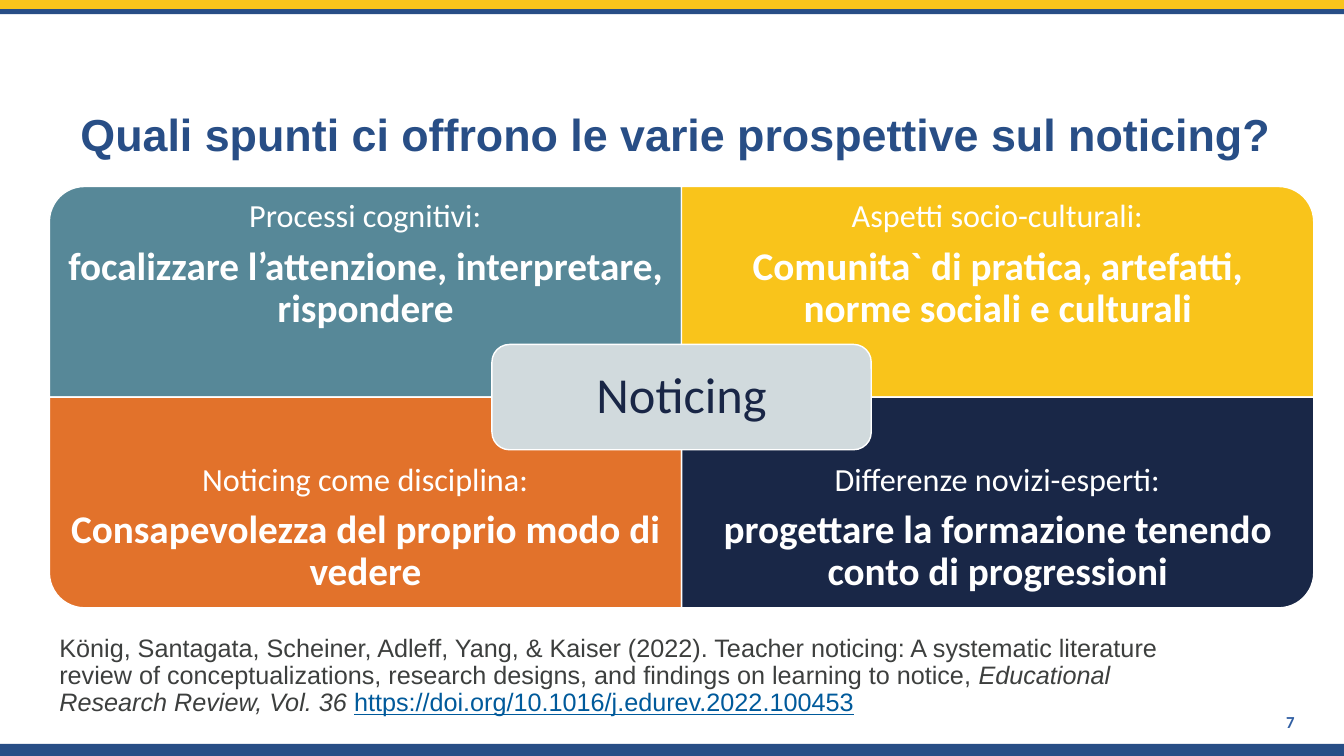
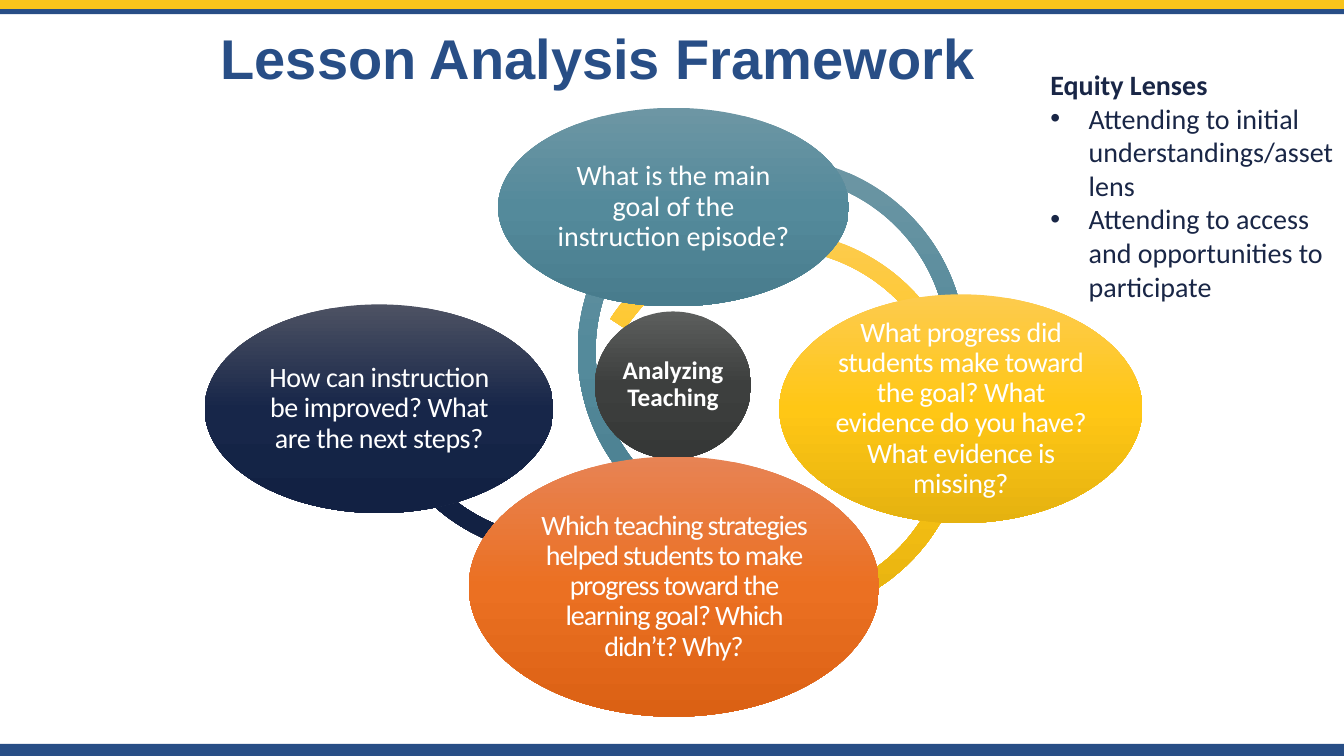
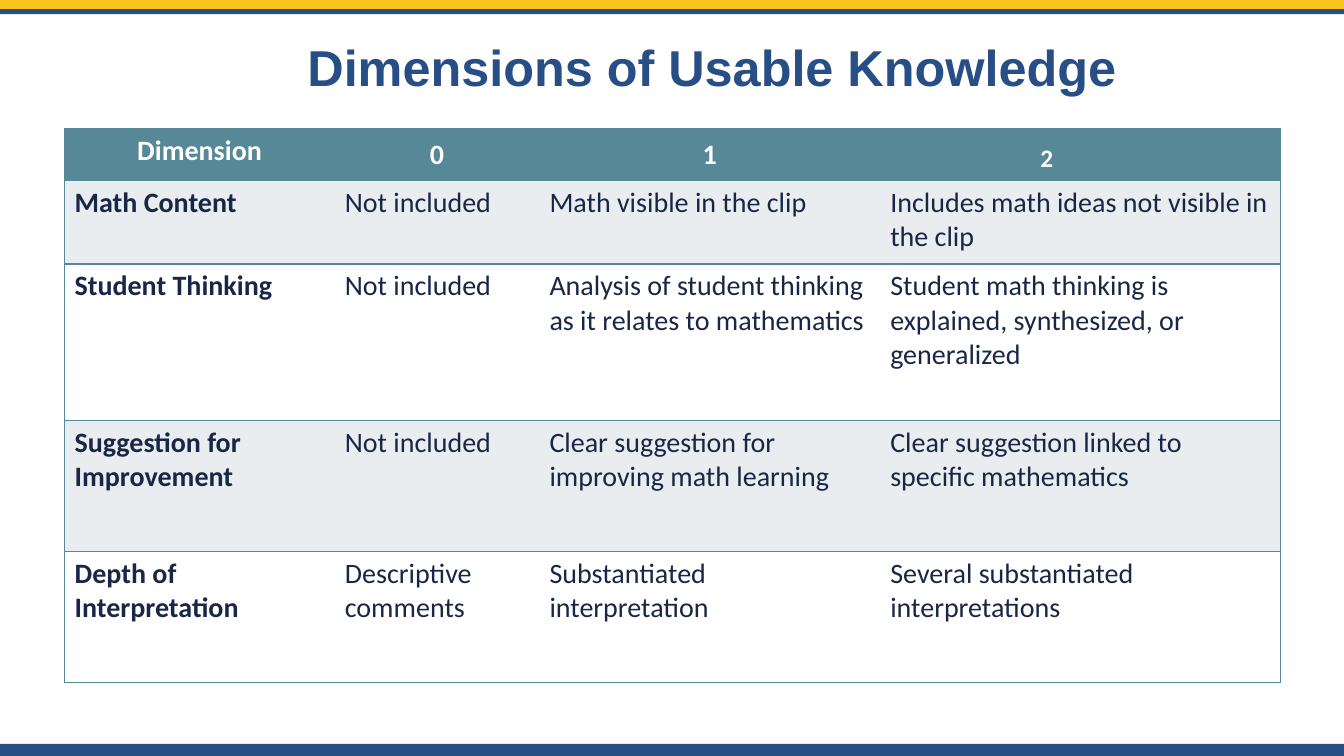
"""Build three slides on teacher noticing and lesson analysis."""
import copy
import dataclasses

import lxml.etree
import pptx
import pptx.dml.color
import pptx.enum.shapes
import pptx.enum.text
import pptx.oxml.ns
import pptx.util

Inches = pptx.util.Inches
Pt = pptx.util.Pt
SHAPE = pptx.enum.shapes.MSO_SHAPE
ALIGN = pptx.enum.text.PP_ALIGN
ANCHOR = pptx.enum.text.MSO_ANCHOR
qn = pptx.oxml.ns.qn


@dataclasses.dataclass(frozen=True)
class Theme:
    title_font: str = "Arial"
    body_font: str = "Calibri"
    blue: str = "284E86"
    yellow: str = "F9C41B"
    teal: str = "578898"
    orange: str = "E2722B"
    navy: str = "192747"
    ink: str = "192646"
    white: str = "FFFFFF"
    mist: str = "D1DADD"
    stripe: str = "EAEDEF"
    grey: str = "3D3F3E"
    link: str = "005A9B"
    number: str = "315FA3"
    teal_fade: tuple = ("6D96A4", "548A9B", "487C8D")
    yellow_fade: tuple = ("FDCB4E", "FFC715", "E5B210")
    orange_fade: tuple = ("E78354", "EB7022", "DB6114")
    navy_fade: tuple = ("4D5263", "172649", "122143")
    grey_fade: tuple = ("5C5E5D", "3D3F3E", "363837")
    core_size: int = 36
    claim_size: int = 28
    topic_size: int = 23
    body_size: int = 20
    small_size: int = 18
    number_size: int = 12


THEME = Theme()


@dataclasses.dataclass
class Run:
    text: str
    size: int = THEME.body_size
    color: str = THEME.white
    bold: bool = False
    italic: bool = False
    underline: bool = False
    font: str = THEME.body_font
    tracking: int = 0


WIDTH, HEIGHT = 13.33, 7.5
BANDS = [
    (HEIGHT - 0.12, 0.12, THEME.blue),
    (0, 0.12, THEME.yellow),
    (0.09, 0.05, THEME.blue),
]

PERSPECTIVES_TITLE = "Quali spunti ci offrono le varie prospettive sul noticing?"
PERSPECTIVES = [
    ("Processi cognitivi:", "focalizzare l’attenzione, interpretare, rispondere", THEME.teal, 270),
    ("Aspetti socio-culturali:", "Comunita` di pratica, artefatti, norme sociali e culturali", THEME.yellow, 0),
    ("Noticing come disciplina:", "Consapevolezza del proprio modo di vedere", THEME.orange, 180),
    ("Differenze novizi-esperti:", "progettare la formazione tenendo conto di progressioni", THEME.navy, 90),
]
CITATION = [
    ("König, Santagata, Scheiner, Adleff, Yang, & Kaiser (2022). Teacher noticing: "
     "A systematic literature review of conceptualizations, research designs, and "
     "findings on learning to notice, ", {}),
    ("Educational Research Review, Vol. 36 ", {"italic": True}),
    ("https://doi.org/10.1016/j.edurev.2022.100453", {"color": THEME.link, "underline": True}),
]

FRAMEWORK_TITLE = "Lesson Analysis Framework"
ARC_SIZE, ARC_THICKNESS = 3.85, 0.046
ARCS = [
    (3.66, 1.66, 99.25, 183.5, THEME.navy_fade),
    (3.71, 2.33, 33.61, 111.72, THEME.orange_fade),
    (5.74, 2.29, 213.12, 72.84, THEME.yellow_fade),
    (5.73, 1.56, 142.29, 7.72, THEME.teal_fade),
]
QUESTIONS = [
    ((5.9, 3.09, 1.55, 1.46), THEME.grey_fade,
     Run("Analyzing Teaching", THEME.small_size, bold=True)),
    ((4.94, 1.07, 3.48, 1.97), THEME.teal_fade,
     Run("What is the main goal of the instruction episode?")),
    ((7.73, 2.92, 3.6, 2.27), THEME.yellow_fade,
     Run("What progress did students make toward the goal? What evidence do you have? "
         "What evidence is missing?", tracking=-30)),
    ((4.65, 4.53, 4.07, 2.58), THEME.orange_fade,
     Run("Which teaching strategies helped students to make progress toward the "
         "learning goal? Which didn’t? Why?", tracking=-80)),
    ((2.03, 3.02, 3.46, 2.07), THEME.navy_fade,
     Run("How can instruction be improved? What are the next steps?", tracking=-30)),
]
LENSES_HEADING = "Equity Lenses"
LENSES = [
    "Attending to initial understandings/asset lens",
    "Attending to access and opportunities to participate",
]

DIMENSIONS_TITLE = "Dimensions of Usable Knowledge"
TOP_SCORE = "2"
DIMENSIONS = [
    ("Dimension", "0", "1", ""),
    ("Math Content", "Not included", "Math visible in the clip",
     "Includes math ideas not visible in the clip"),
    ("Student Thinking", "Not included",
     "Analysis of student thinking as it relates to mathematics",
     "Student math thinking is explained, synthesized, or generalized"),
    ("Suggestion for Improvement", "Not included",
     "Clear suggestion for improving math learning",
     "Clear suggestion linked to specific mathematics"),
    ("Depth of Interpretation", "Descriptive comments",
     "Substantiated interpretation", "Several substantiated interpretations"),
]
COLUMN_WIDTHS = [2.68, 2.03, 3.38, 3.97]
ROW_HEIGHTS = [0.51, 0.83, 1.55, 1.3, 1.3]


def rgb(color):
    return pptx.dml.color.RGBColor.from_string(color)


def add_run(paragraph, content):
    run = paragraph.add_run()
    run.text = content.text
    font = run.font
    font.name, font.size = content.font, Pt(content.size)
    font.color.rgb = rgb(content.color)
    font.bold, font.italic, font.underline = content.bold, content.italic, content.underline
    if content.tracking:
        run._r.get_or_add_rPr().set("spc", str(content.tracking))


def write(holder, paragraphs, align=ALIGN.LEFT, anchor=ANCHOR.MIDDLE, inset=None, spacing=0.9, after=0):
    frame = holder.text_frame
    frame.word_wrap = True
    frame.vertical_anchor = anchor
    if inset is not None:
        frame.margin_left = frame.margin_right = Inches(inset)
        frame.margin_top = frame.margin_bottom = Inches(inset)
    for index, runs in enumerate(paragraphs):
        paragraph = frame.add_paragraph() if index else frame.paragraphs[0]
        paragraph.alignment = align
        paragraph.line_spacing = spacing
        if after:
            paragraph.space_after = Pt(round(after * runs[0].size))
        for content in runs:
            add_run(paragraph, content)
    return frame


def add_text(slide, place, paragraphs, **style):
    return write(slide.shapes.add_textbox(*map(Inches, place)), paragraphs, **style)


def add_plain(slide, preset, place, fill, line=None):
    shape = slide.shapes.add_shape(preset, *map(Inches, place))
    shape.shadow.inherit = False
    if isinstance(fill, tuple):
        fade(shape, fill)
    else:
        shape.fill.solid()
        shape.fill.fore_color.rgb = rgb(fill)
    if line:
        shape.line.color.rgb = rgb(line)
        shape.line.width = Pt(1)
    else:
        shape.line.fill.background()
    return shape


def fade(shape, colors):
    shape.fill.gradient()
    shape.fill.gradient_angle = 270
    stops = shape.element.spPr.find(".//" + qn("a:gsLst"))
    stops.insert(1, copy.deepcopy(stops[0]))
    for index, (stop, color) in enumerate(zip(shape.fill.gradient_stops, colors)):
        stop.color.rgb = rgb(color)
        stop.position = index / 2


def new_slide(deck, title, place, size):
    slide = deck.slides.add_slide(deck.slide_layouts[6])
    for top, height, color in BANDS:
        add_plain(slide, SHAPE.RECTANGLE, (0, top, WIDTH, height), color)
    add_text(slide, place, [[Run(title, size, THEME.blue, bold=True, font=THEME.title_font)]])
    return slide


def build_perspectives(deck):
    slide = new_slide(deck, PERSPECTIVES_TITLE, (0.7, 0.72, 12.53, 1.28), 32)
    left, top, width, height = 0.49, 1.85, 6.27, 2.09
    label_height = height * 0.75
    for index, (topic, claim, color, turn) in enumerate(PERSPECTIVES):
        row, column = divmod(index, 2)
        x, y = left + column * width, top + row * height
        w, h = (height, width) if turn % 180 else (width, height)
        place = (x + (width - w) / 2, y + (height - h) / 2, w, h)
        add_plain(slide, SHAPE.ROUND_1_RECTANGLE, place, color, THEME.white).rotation = turn
        add_text(slide, (x, y + row * (height - label_height), width, label_height),
                 [[Run(topic, THEME.topic_size)], [Run(claim, THEME.claim_size, bold=True)]],
                 align=ALIGN.CENTER, inset=0.18, after=0.35)
    core_width, core_height = width * 0.6, height / 2
    core = add_plain(slide, SHAPE.ROUNDED_RECTANGLE,
                     (left + width - core_width / 2, top + height - core_height / 2,
                      core_width, core_height), THEME.mist, THEME.white)
    write(core, [[Run("Noticing", THEME.core_size, THEME.ink)]], align=ALIGN.CENTER, inset=0.15)
    add_text(slide, (10.03, 6.96, 2.91, 0.4),
             [[Run("7", THEME.number_size, THEME.number, bold=True)]], align=ALIGN.RIGHT, spacing=1)
    plain = {"size": THEME.small_size, "color": THEME.grey, "font": THEME.title_font}
    add_text(slide, (0.49, 5.87, 11.59, 1.68),
             [[Run(text, **{**plain, **style}) for text, style in CITATION]])


def build_framework(deck):
    slide = new_slide(deck, FRAMEWORK_TITLE, (2.09, -0.02, 11.24, 1.25), 40)
    for left, top, start, end, colors in ARCS:
        arc = add_plain(slide, SHAPE.BLOCK_ARC, (left, top, ARC_SIZE, ARC_SIZE), colors)
        for index, value in enumerate((start * 0.6, end * 0.6, ARC_THICKNESS)):
            arc.adjustments[index] = value
    for place, colors, question in QUESTIONS:
        write(add_plain(slide, SHAPE.OVAL, place, colors), [[question]],
              align=ALIGN.CENTER, inset=0.03)
    frame = add_text(slide, (10.32, 0.62, 3.14, 2.46),
                     [[Run(LENSES_HEADING, color=THEME.ink, bold=True)]]
                     + [[Run(lens, color=THEME.ink)] for lens in LENSES],
                     anchor=ANCHOR.TOP, spacing=1)
    for paragraph in frame.paragraphs[1:]:
        properties = paragraph._p.get_or_add_pPr()
        properties.set("marL", str(Inches(0.38)))
        properties.set("indent", str(-Inches(0.38)))
        lxml.etree.SubElement(properties, qn("a:buFont"), typeface="Arial")
        lxml.etree.SubElement(properties, qn("a:buChar"), char="•")


def set_borders(cell, drawn):
    properties = cell._tc.get_or_add_tcPr()
    for index, side in enumerate("LRTB"):
        border = lxml.etree.Element(qn("a:ln" + side), w=str(Pt(1)))
        if side in drawn:
            solid = lxml.etree.SubElement(border, qn("a:solidFill"))
            lxml.etree.SubElement(solid, qn("a:srgbClr"), val=THEME.teal)
        else:
            lxml.etree.SubElement(border, qn("a:noFill"))
        properties.insert(index, border)


def build_dimensions(deck):
    slide = new_slide(deck, DIMENSIONS_TITLE, (2.95, 0.05, 8.45, 1.3), 36)
    place = (0.64, 1.28, sum(COLUMN_WIDTHS), sum(ROW_HEIGHTS))
    rubric = slide.shapes.add_table(len(DIMENSIONS), len(COLUMN_WIDTHS), *map(Inches, place)).table
    for column, width in zip(rubric.columns, COLUMN_WIDTHS):
        column.width = Inches(width)
    for row, height in zip(rubric.rows, ROW_HEIGHTS):
        row.height = Inches(height)
    last = len(COLUMN_WIDTHS) - 1
    for r, levels in enumerate(DIMENSIONS):
        header = r == 0
        fill = THEME.teal if header else THEME.stripe if r % 2 else THEME.white
        for c, level in enumerate(levels):
            cell = rubric.cell(r, c)
            cell.fill.solid()
            cell.fill.fore_color.rgb = rgb(fill)
            set_borders(cell, "TB" + "L" * (c == 0) + "R" * (c == last))
            cell.vertical_anchor = ANCHOR.MIDDLE if header and c else ANCHOR.TOP
            paragraph = cell.text_frame.paragraphs[0]
            paragraph.alignment = ALIGN.CENTER if header else ALIGN.LEFT
            if level:
                add_run(paragraph, Run(level, color=THEME.white if header else THEME.ink,
                                       bold=header or c == 0))
    add_text(slide, (10.22, 1.36, 0.5, 0.4), [[Run(TOP_SCORE, THEME.small_size, bold=True)]],
             anchor=ANCHOR.TOP, spacing=1)


def main():
    deck = pptx.Presentation()
    deck.slide_width, deck.slide_height = Inches(WIDTH), Inches(HEIGHT)
    build_perspectives(deck)
    build_framework(deck)
    build_dimensions(deck)
    deck.save("out.pptx")


if __name__ == "__main__":
    main()
